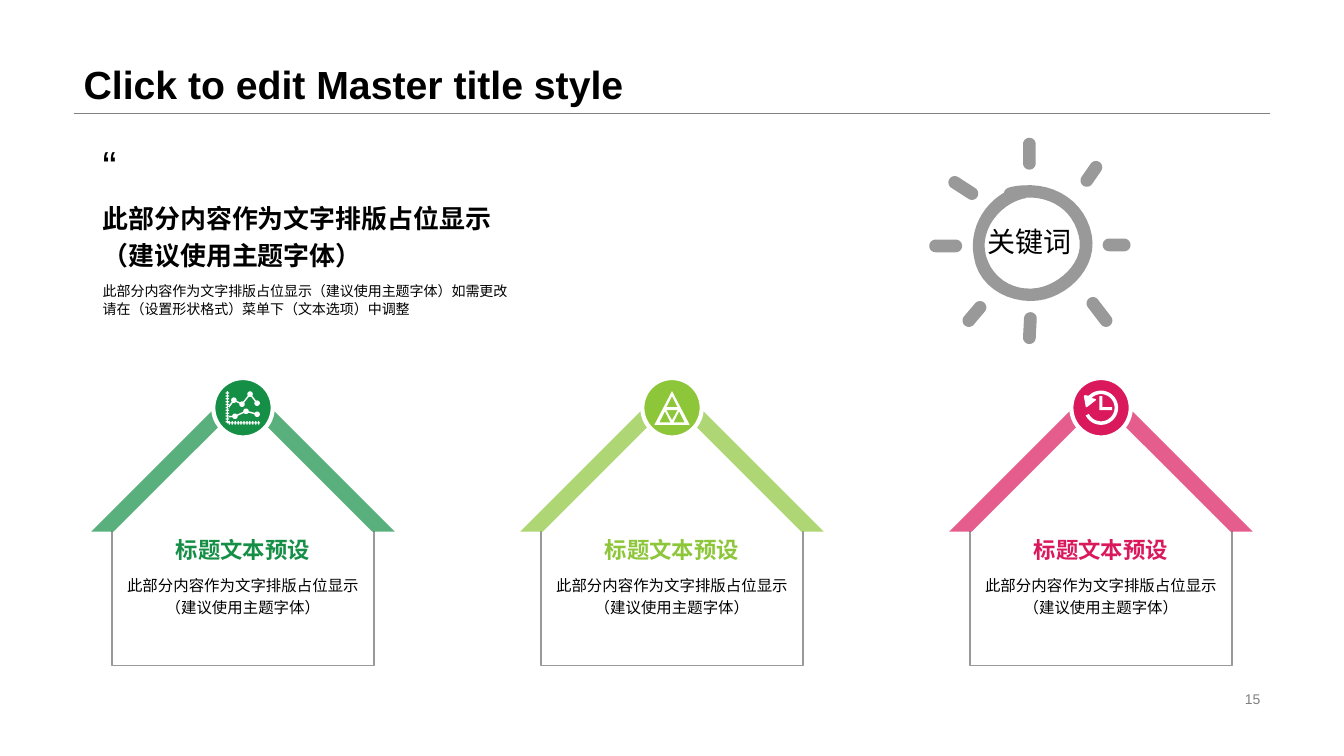
from dataclasses import dataclass
from math import atan2, cos, hypot, pi, radians, sin

from lxml.etree import SubElement
from pptx import Presentation
from pptx.dml.color import RGBColor
from pptx.enum.shapes import MSO_CONNECTOR, MSO_SHAPE
from pptx.enum.text import MSO_ANCHOR, PP_ALIGN
from pptx.oxml.ns import qn
from pptx.util import Inches, Pt

BLACK = RGBColor(0x00, 0x00, 0x00)
WHITE = RGBColor(0xFF, 0xFF, 0xFF)
RULE_GRAY = RGBColor(0x80, 0x80, 0x80)
SUN_GRAY = RGBColor(0x99, 0x99, 0x99)
GREEN = RGBColor(0x15, 0x8F, 0x46)
LIME = RGBColor(0x8D, 0xC6, 0x39)
PINK = RGBColor(0xDA, 0x19, 0x5C)

PLACEHOLDER_TEXT = "此部分内容作为文字排版占位显示"
FONT_HINT = "（建议使用主题字体）"

Point = tuple[float, float]
Contour = list[Point]


@dataclass
class House:
    center: float
    color: RGBColor
    icon: list[Contour]


@dataclass
class Label:
    lines: list[str]
    box: tuple[float, float, float, float]
    size: float
    color: RGBColor = BLACK
    bold: bool = False
    align: PP_ALIGN = PP_ALIGN.LEFT
    anchor: MSO_ANCHOR = MSO_ANCHOR.MIDDLE
    spacing: float = 1.0
    wrap: bool = True


def arc(x: float, y: float, radius: float, start: float, end: float, steps: int = 32) -> Contour:
    angles = [radians(start + (end - start) * step / steps) for step in range(steps + 1)]
    return [(x + radius * cos(angle), y + radius * sin(angle)) for angle in angles]


def bezier(anchors: Contour, steps: int = 12) -> Contour:
    points = [anchors[0]]
    for index in range(0, len(anchors) - 1, 3):
        a, b, c, d = anchors[index:index + 4]
        for step in range(1, steps + 1):
            t = step / steps
            u = 1 - t
            points.append(tuple(
                u**3 * a[k] + 3 * u * u * t * b[k] + 3 * u * t * t * c[k] + t**3 * d[k]
                for k in (0, 1)))
    return points


def capsule(start: Point, end: Point, radius: float) -> Contour:
    turn = atan2(end[1] - start[1], end[0] - start[0]) * 180 / pi
    return (arc(*end, radius, turn - 90, turn + 90, 12)
            + arc(*start, radius, turn + 90, turn + 270, 12))


def rectangle(left: float, top: float, right: float, bottom: float) -> Contour:
    return [(left, top), (right, top), (right, bottom), (left, bottom)]


def bar(start: Point, end: Point, trim_start: float, trim_end: float) -> Contour:
    dx, dy = end[0] - start[0], end[1] - start[1]
    length = hypot(dx, dy)
    dx, dy = dx / length, dy / length
    x1, y1 = start[0] + dx * trim_start, start[1] + dy * trim_start
    x2, y2 = end[0] - dx * trim_end, end[1] - dy * trim_end
    nx, ny = -dy * 0.007, dx * 0.007
    return [(x1 + nx, y1 + ny), (x2 + nx, y2 + ny), (x2 - nx, y2 - ny), (x1 - nx, y1 - ny)]


def line_chart_icon() -> list[Contour]:
    dot = 0.027
    contours = [[(-0.16, 3.88), (-0.15, 3.88), (-0.15, 4.19), (0.17, 4.19), (0.17, 4.2), (-0.16, 4.2)]]
    for tick in range(11):
        y, x = 3.9 + 0.0285 * tick, -0.135 + 0.029 * tick
        contours += [rectangle(left, y - 0.006, left + 0.012, y + 0.006) for left in (-0.172, -0.15)]
        contours += [rectangle(x - 0.006, top, x + 0.006, top + 0.012) for top in (4.178, 4.2)]
    series = [
        [(-0.15, 4.05), (-0.09, 3.97), (-0.01, 4.01), (0.07, 3.91), (0.14, 4.0)],
        [(-0.15, 4.135), (-0.08, 4.13), (0.03, 4.08), (0.14, 4.11)],
    ]
    for points in series:
        contours += [arc(*point, dot, 0, 360) for point in points[1:]]
        for index, (start, end) in enumerate(zip(points, points[1:])):
            contours.append(bar(start, end, dot if index else 0, dot))
    return contours


def triangle_icon() -> list[Contour]:
    return [
        [(0, 3.88), (-0.175, 4.215), (0.175, 4.215)],
        [(0, 3.93), (0.055, 4.04), (-0.055, 4.04)],
        [(-0.125, 4.19), (-0.07, 4.08), (-0.015, 4.19)],
        [(-0.055, 4.07), (0.055, 4.07), (0, 4.17)],
        [(0.07, 4.08), (0.125, 4.19), (0.015, 4.19)],
    ]


def clock_icon() -> list[Contour]:
    arrow = [(-0.05, 3.96), (-0.05, 3.97), (-0.14, 4.04), (-0.15, 4.04), (-0.17, 3.93), (-0.16, 3.92)]
    ring = arc(0, 4.045, 0.17, -136, 153) + arc(0, 4.045, 0.135, 153, -134) + arrow
    hands = [(-0.015, 3.93), (0.015, 3.93), (0.015, 4.04), (0.11, 4.04), (0.11, 4.07), (-0.015, 4.07)]
    return [ring, hands]


def sun() -> list[Contour]:
    rays = [
        ((10.22, 3.16), (10.21, 3.35)), ((9.72, 3.05), (9.61, 3.18)),
        ((10.84, 3.01), (10.97, 3.18)), ((9.28, 2.44), (9.48, 2.44)),
        ((11, 2.43), (11.15, 2.43)), ((9.47, 1.81), (9.64, 1.92)),
        ((10.87, 1.66), (10.78, 1.79)), ((10.21, 1.43), (10.21, 1.62)),
    ]
    inner = [(10.18, 1.96), (10.17, 1.97), (10.16, 1.97), (10.15, 1.97), (9.91, 2.03), (9.71, 2.29),
             (9.78, 2.54), (9.85, 2.79), (10.11, 2.92), (10.36, 2.84), (10.56, 2.77), (10.76, 2.57),
             (10.7, 2.34), (10.64, 2.08), (10.42, 1.95), (10.18, 1.96)]
    outer = [(10.14, 1.84), (10.46, 1.81), (10.77, 2), (10.83, 2.34), (10.88, 2.63), (10.64, 2.9),
             (10.36, 2.97), (10.07, 3.04), (9.71, 2.88), (9.66, 2.55), (9.61, 2.29), (9.74, 2.04),
             (9.96, 1.91), (9.96, 1.89), (9.98, 1.87), (10.01, 1.86), (10.05, 1.85), (10.1, 1.84),
             (10.14, 1.84)]
    return [bezier(outer), bezier(inner)] + [capsule(*ray, 0.063) for ray in rays]


def add_outline(slide, contours: list[Contour], fill: RGBColor, center: float = 0, closed: bool = True):
    placed = [[(Inches(center + x), Inches(y)) for x, y in contour] for contour in contours]
    builder = slide.shapes.build_freeform(*placed[0][0])
    for index, contour in enumerate(placed):
        if index:
            builder.move_to(*contour[0])
        builder.add_line_segments(contour[1:], close=closed)
    shape = builder.convert_to_shape()
    paint(shape, fill)
    return shape


def paint(shape, fill: RGBColor) -> None:
    shape.shadow.inherit = False
    shape.fill.solid()
    shape.fill.fore_color.rgb = fill
    shape.line.fill.background()


def write(frame, label: Label) -> None:
    frame.word_wrap = label.wrap
    frame.vertical_anchor = label.anchor
    paragraph = frame.paragraphs[0]
    paragraph.alignment = label.align
    paragraph.line_spacing = label.spacing
    for index, line in enumerate(label.lines):
        if index:
            paragraph.add_line_break()
        run = paragraph.add_run()
        run.text = line
        run.font.name = "Arial"
        run.font.size = Pt(label.size)
        run.font.bold = label.bold
        run.font.color.rgb = label.color


def add_label(slide, label: Label) -> None:
    write(slide.shapes.add_textbox(*map(Inches, label.box)).text_frame, label)


def add_house(slide, house: House) -> None:
    center = house.center
    walls = add_outline(slide, [[(1.3, 5.27), (1.3, 6.6), (-1.3, 6.6), (-1.3, 5.27)]], WHITE, center, False)
    walls.line.color.rgb = SUN_GRAY
    walls.line.width = Pt(1)
    roof = slide.shapes.add_shape(MSO_SHAPE.HALF_FRAME, Inches(center - 1.065), Inches(4.21), Inches(2.13), Inches(2.13))
    roof.rotation = 45
    roof.adjustments[0] = roof.adjustments[1] = 0.074
    paint(roof, house.color)
    color = roof.fill._xPr.find(qn("a:solidFill"))[0]
    SubElement(color, qn("a:alpha")).set("val", "70000")
    badge = slide.shapes.add_shape(MSO_SHAPE.OVAL, Inches(center - 0.295), Inches(3.75), Inches(0.59), Inches(0.59))
    paint(badge, house.color)
    badge.line.color.rgb = WHITE
    badge.line.width = Pt(3)
    add_outline(slide, house.icon, WHITE, center)
    left = center - 1.41
    add_label(slide, Label([PLACEHOLDER_TEXT, FONT_HINT], (left, 5.63, 2.82, 0.79), 11,
                           align=PP_ALIGN.CENTER, anchor=MSO_ANCHOR.TOP, spacing=1.2))
    add_label(slide, Label(["标题文本预设"], (left, 5.28, 2.82, 0.35), 16, house.color, True,
                           PP_ALIGN.CENTER, MSO_ANCHOR.BOTTOM, wrap=False))


def main() -> None:
    presentation = Presentation()
    presentation.slide_width, presentation.slide_height = Inches(13.33), Inches(7.5)
    slide = presentation.slides.add_slide(presentation.slide_layouts[5])
    title = slide.shapes.title
    heading = Label(["Click to edit Master title style"], (0.73, 0, 11.87, 1.12), 28, bold=True,
                    anchor=MSO_ANCHOR.BOTTOM, spacing=0.9)
    title.left, title.top, title.width, title.height = map(Inches, heading.box)
    write(title.text_frame, heading)
    rule = slide.shapes.add_connector(MSO_CONNECTOR.STRAIGHT, Inches(0.73), Inches(1.12), Inches(12.6), Inches(1.12))
    rule.line.color.rgb = RULE_GRAY
    rule.line.width = Pt(0.25)
    SubElement(rule.line._get_or_add_ln().getparent(), qn("a:effectLst"))
    styles = [(GREEN, line_chart_icon()), (LIME, triangle_icon()), (PINK, clock_icon())]
    for index, (color, icon) in enumerate(styles):
        add_house(slide, House(2.41 + 4.255 * index, color, icon))
    add_outline(slide, sun(), SUN_GRAY)
    for label in [
        Label(["15"], (9.42, 6.82, 3.18, 0.23), 10, RULE_GRAY, align=PP_ALIGN.RIGHT),
        Label(["关键词"], (9.39, 2.07, 1.65, 0.64), 20, align=PP_ALIGN.CENTER, wrap=False),
        Label(["“"], (0.92, 1.36, 0.45, 0.54), 30),
        Label([PLACEHOLDER_TEXT, FONT_HINT], (0.92, 1.9, 4.26, 0.83), 18.5, bold=True, spacing=1.2),
        Label([PLACEHOLDER_TEXT + FONT_HINT + "如需更改请在（设置形状格式）菜单下（文本选项）中调整"],
              (0.92, 2.73, 4.26, 0.47), 10, spacing=1.1),
    ]:
        add_label(slide, label)
    presentation.save("out.pptx")


if __name__ == "__main__":
    main()
